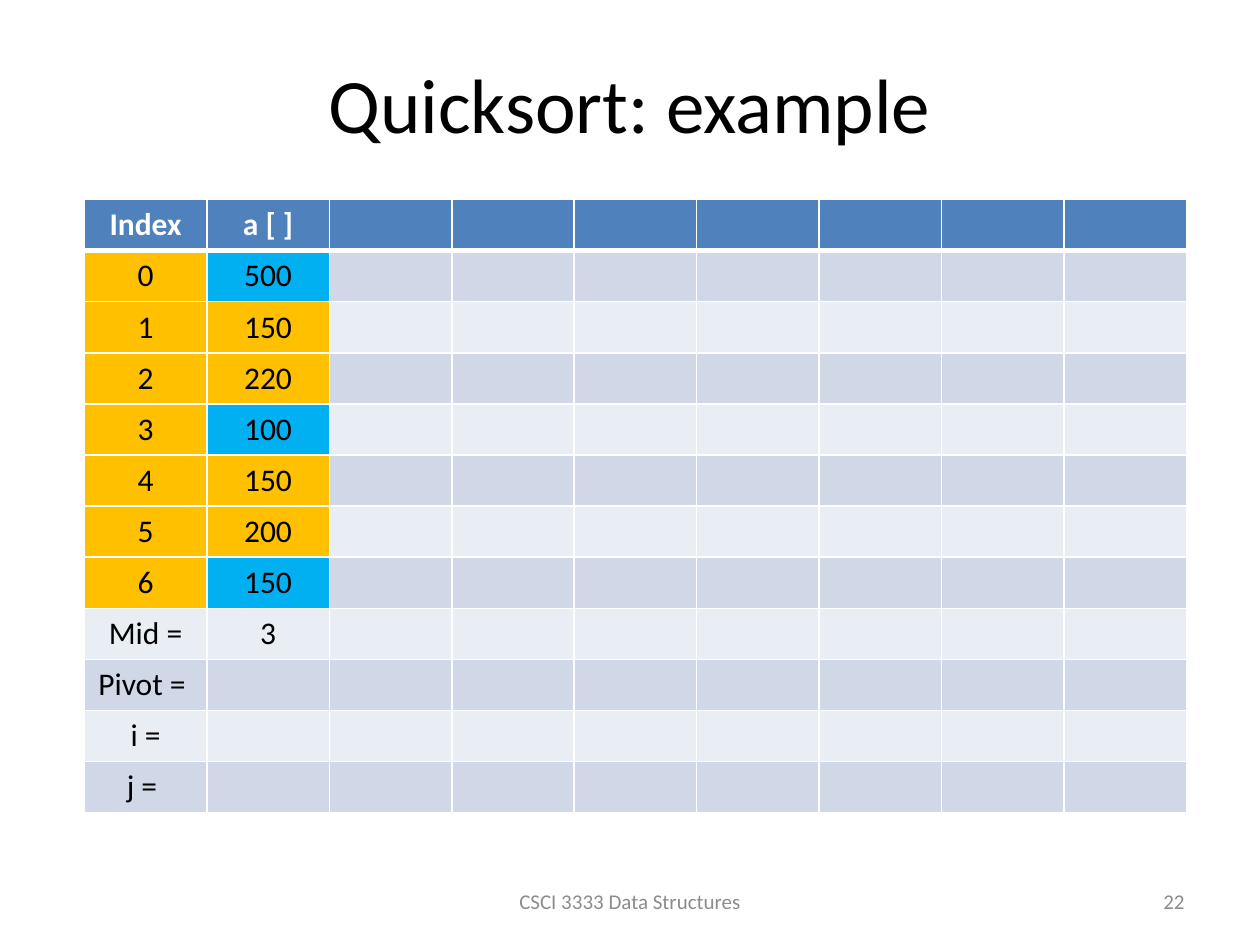
import pptx
import pptx.util
import pptx.dml.color
import pptx.enum.text
import pptx.oxml
import pptx.oxml.ns
from pptx.util import Pt

# Content
TITLE = "Quicksort: example"
COLUMN_COUNT = 9
HEADINGS = ["Index", "a [ ]"]
ARRAY = [500, 150, 220, 100, 150, 200, 150]
PIVOT_CANDIDATES = {0, 3, 6}  # first, middle and last index
VARIABLES = [("Mid =", "3"), ("Pivot = ", ""), ("i =", ""), ("j = ", "")]
COURSE = "CSCI 3333 Data Structures"
PAGE = "22"

THEME = {
    "font": "Calibri",
    "title_size": 44, "table_size": 18, "footer_size": 12,
    "text": "000000", "heading_text": "FFFFFF", "footer_text": "8C8C8C",
    "heading": "4F81BD", "bands": ("D0D8E8", "E9EDF4"),
    "element": "FFC000", "candidate": "00B0F0",
    "border": "FFFFFF", "border_width": 1, "heading_rule": 3,
}

# Layout: left, top, width, height in points
TITLE_BOX = (36, 21.6, 648, 74.4)
TABLE_LEFT, TABLE_TOP = 48.2, 114
COLUMN_WIDTH, ROW_HEIGHT = 70, 29.2
COURSE_BOX = (246, 500.5, 228, 28.8)
PAGE_BOX = (516, 500.5, 168, 28.8)

ALIGN = pptx.enum.text.PP_ALIGN
MIDDLE = pptx.enum.text.MSO_ANCHOR.MIDDLE


def rgb(color):
    return pptx.dml.color.RGBColor.from_string(color)


def write(frame, text, size, color, align=ALIGN.CENTER, bold=False):
    paragraph = frame.paragraphs[0]
    paragraph.alignment = align
    run = paragraph.add_run()
    run.text = text
    run.font.name = THEME["font"]
    run.font.size = Pt(size)
    run.font.bold = bold
    run.font.color.rgb = rgb(color)


def set_borders(cell, top, bottom):
    properties = cell._tc.get_or_add_tcPr()
    side = THEME["border_width"]
    widths = [("lnL", side), ("lnR", side), ("lnT", top), ("lnB", bottom)]
    for position, (tag, width) in enumerate(widths):
        properties.insert(position, pptx.oxml.parse_xml(
            f'<a:{tag} {pptx.oxml.ns.nsdecls("a")} w="{Pt(width)}"><a:solidFill>'
            f'<a:srgbClr val="{THEME["border"]}"/></a:solidFill></a:{tag}>'))


def cell_fill(row, column):
    if row == 0:
        return THEME["heading"]
    index = row - 1
    if index < len(ARRAY) and column < len(HEADINGS):
        is_candidate = column == 1 and index in PIVOT_CANDIDATES
        return THEME["candidate" if is_candidate else "element"]
    return THEME["bands"][index % 2]


def add_footer(slide, box, text, align):
    frame = slide.shapes.add_textbox(*map(Pt, box)).text_frame
    frame.word_wrap = True
    frame.vertical_anchor = MIDDLE
    write(frame, text, THEME["footer_size"], THEME["footer_text"], align)


def add_trace_table(slide):
    elements = [(str(index), str(value)) for index, value in enumerate(ARRAY)]
    rows = [HEADINGS] + elements + VARIABLES
    trace = slide.shapes.add_table(
        len(rows), COLUMN_COUNT, Pt(TABLE_LEFT), Pt(TABLE_TOP),
        Pt(COLUMN_WIDTH * COLUMN_COUNT), Pt(ROW_HEIGHT * len(rows))).table
    for column in trace.columns:
        column.width = Pt(COLUMN_WIDTH)
    for r, labels in enumerate(rows):
        trace.rows[r].height = Pt(ROW_HEIGHT)
        top = THEME["heading_rule" if r == 1 else "border_width"]
        bottom = THEME["heading_rule" if r == 0 else "border_width"]
        color = THEME["heading_text" if r == 0 else "text"]
        for c in range(COLUMN_COUNT):
            cell = trace.cell(r, c)
            cell.fill.solid()
            cell.fill.fore_color.rgb = rgb(cell_fill(r, c))
            set_borders(cell, top, bottom)
            if c < len(labels) and labels[c]:
                write(cell.text_frame, labels[c], THEME["table_size"], color,
                      bold=r == 0)


def main():
    deck = pptx.Presentation()
    deck.slide_width, deck.slide_height = Pt(720), Pt(540)
    slide = deck.slides.add_slide(deck.slide_layouts.get_by_name("Title Only"))

    # Title
    title = slide.shapes.title
    title.left, title.top, title.width, title.height = map(Pt, TITLE_BOX)
    title.text_frame.vertical_anchor = MIDDLE
    write(title.text_frame, TITLE, THEME["title_size"], THEME["text"])

    # Array and variables
    add_trace_table(slide)

    # Footer
    add_footer(slide, COURSE_BOX, COURSE, ALIGN.CENTER)
    add_footer(slide, PAGE_BOX, PAGE, ALIGN.RIGHT)

    deck.save("out.pptx")


if __name__ == "__main__":
    main()
